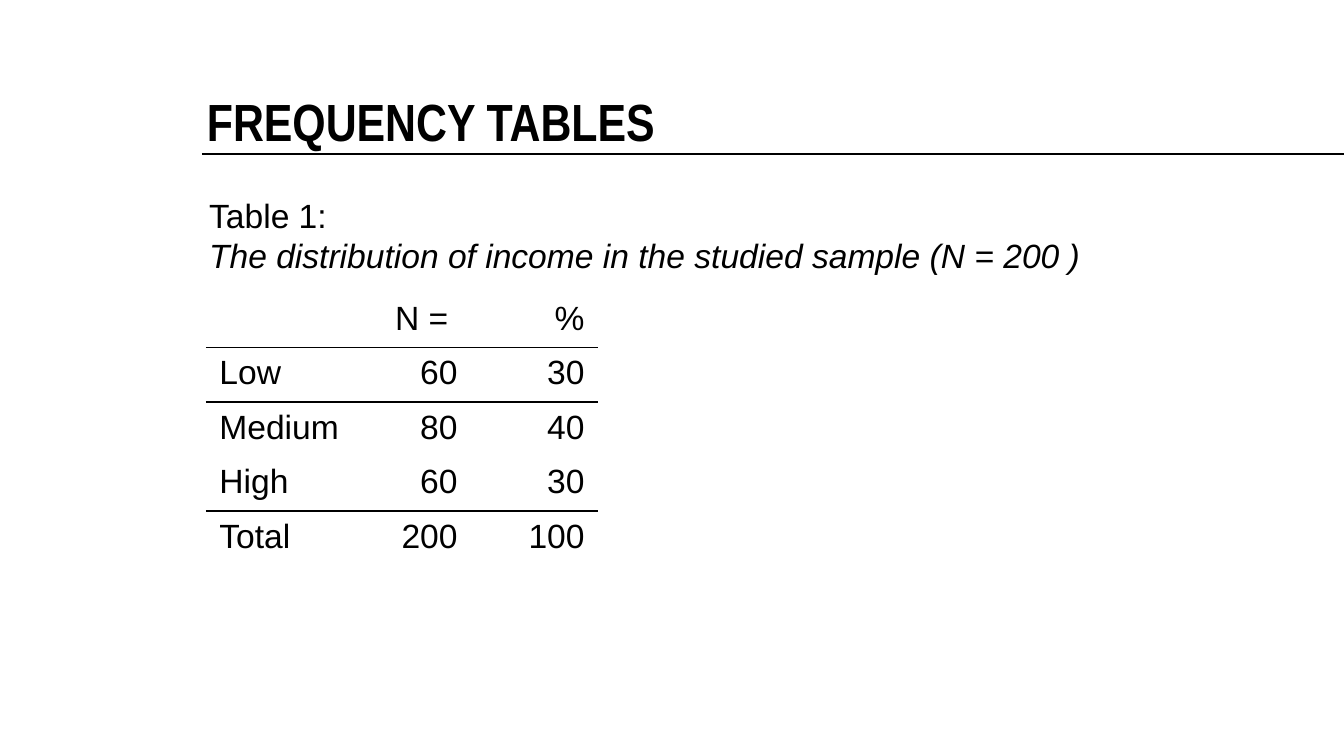
from pptx import Presentation
from pptx.dml.color import RGBColor
from pptx.enum.shapes import MSO_CONNECTOR
from pptx.enum.text import MSO_ANCHOR, PP_ALIGN
from pptx.oxml import parse_xml
from pptx.oxml.ns import nsdecls, qn
from pptx.util import Pt

PX = 914400 / 134.4
BLACK = RGBColor(0, 0, 0)
STRAIGHT = MSO_CONNECTOR.STRAIGHT
BOTTOM = MSO_ANCHOR.BOTTOM
LEFT, RIGHT = PP_ALIGN.LEFT, PP_ALIGN.RIGHT
NO_STYLE = "{2D5ABB26-0587-4C30-8999-92F81FD0307C}"


def px(*lengths):
    return [round(length * PX) for length in lengths]


def write(paragraph, text, font="Arial", size=18, bold=False, italic=False,
          align=LEFT, spacing=None):
    paragraph.alignment = align
    paragraph.line_spacing = spacing
    run = paragraph.add_run()
    run.text = text
    run.font.name = font
    run.font.size = Pt(size)
    run.font.bold = bold
    run.font.italic = italic
    run.font.color.rgb = BLACK


prs = Presentation()
prs.slide_width, prs.slide_height = px(1344, 756)
slide = prs.slides.add_slide(prs.slide_layouts[6])
shapes = slide.shapes

# Heading and its rule
rule = shapes.add_connector(STRAIGHT, *px(202, 154, 1345, 154))
rule.line.color.rgb = BLACK
rule.line.width = Pt(1)
rule._element.spPr.append(parse_xml(f"<a:effectLst {nsdecls('a')}/>"))

heading = shapes.add_textbox(*px(207, 71, 1101, 81)).text_frame
heading.word_wrap = True
heading.vertical_anchor = BOTTOM
heading.margin_left = heading.margin_right = 0
heading.margin_top = heading.margin_bottom = 0
write(heading.paragraphs[0], "FREQUENCY TABLES", font="Arial Narrow", size=28,
      bold=True, spacing=Pt(25))

# Caption
caption = shapes.add_textbox(*px(196, 188, 906, 95)).text_frame
caption.word_wrap = False
write(caption.paragraphs[0], "Table 1:")
write(caption.add_paragraph(),
      "The distribution of income in the studied sample (N = 200 )", italic=True)

# Frequency table
ROWS = [
    ("", "N = ", "%"),
    ("Low", "60", "30"),
    ("Medium", "80", "40"),
    ("High", "60", "30"),
    ("Total", "200", "100"),
]
COLUMN_WIDTHS = px(148, 117, 127)
BORDERS = {0: "lnB", 1: "lnT", 4: "lnT"}

frequencies = shapes.add_table(len(ROWS), len(COLUMN_WIDTHS),
                               *px(206, 293, 392, 273)).table
frequencies.first_row = False
frequencies.horz_banding = False
frequencies._tbl.tblPr.find(qn("a:tableStyleId")).text = NO_STYLE
for column, width in zip(frequencies.columns, COLUMN_WIDTHS):
    column.width = width

for r, values in enumerate(ROWS):
    for c, value in enumerate(values):
        cell = frequencies.cell(r, c)
        cell.fill.background()
        if value:
            write(cell.text_frame.paragraphs[0], value, align=RIGHT if c else LEFT)
        if r in BORDERS:
            side = BORDERS[r]
            cell._tc.get_or_add_tcPr().insert(0, parse_xml(
                f'<a:{side} {nsdecls("a")} w="{Pt(1)}"><a:solidFill>'
                f'<a:srgbClr val="{BLACK}"/></a:solidFill></a:{side}>'))

prs.save("out.pptx")
